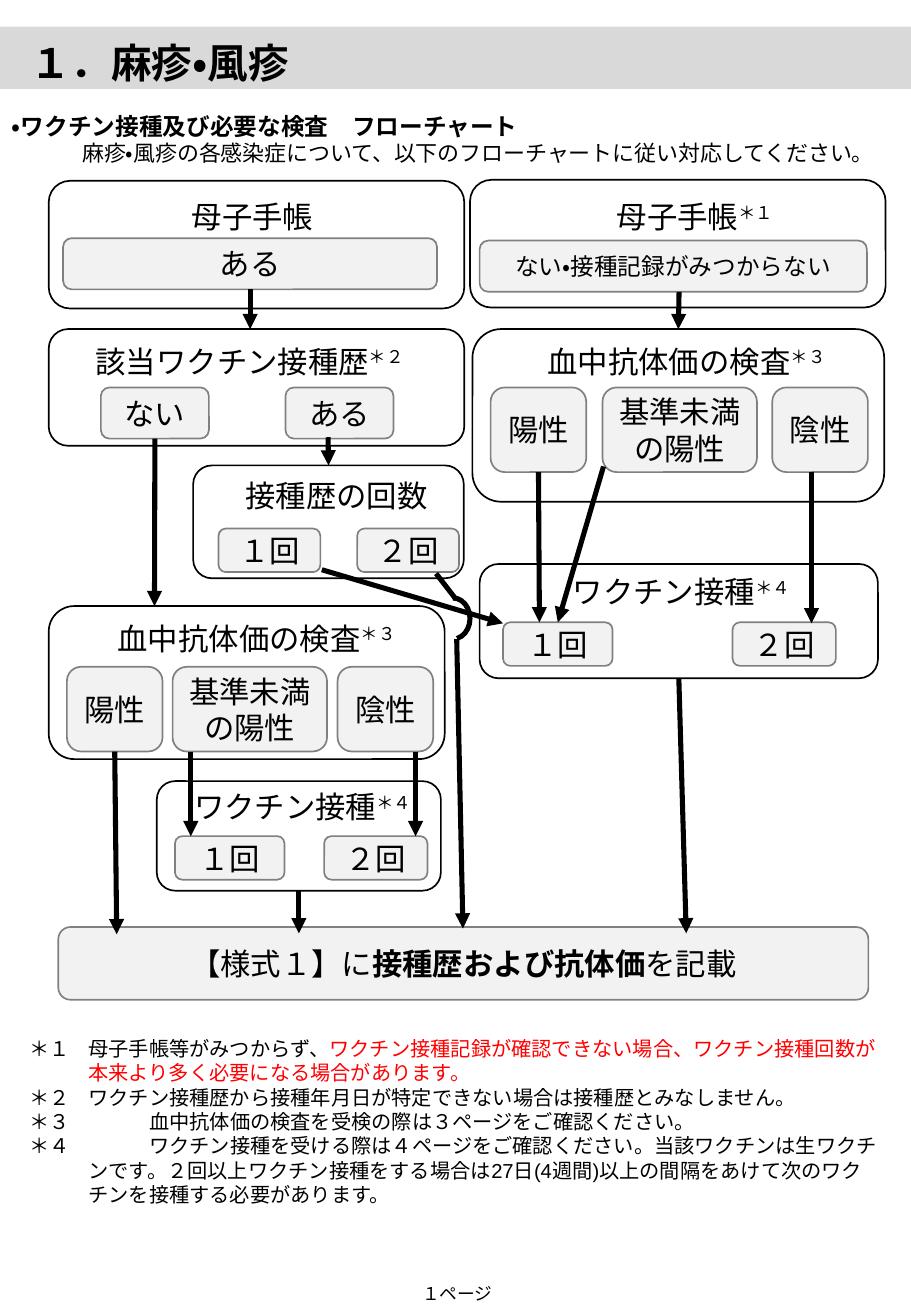
from lxml import etree
from pptx import Presentation
from pptx.dml.color import RGBColor
from pptx.enum.lang import MSO_LANGUAGE_ID
from pptx.enum.shapes import MSO_CONNECTOR, MSO_SHAPE
from pptx.enum.text import MSO_ANCHOR, PP_ALIGN
from pptx.oxml.ns import qn
from pptx.util import Cm, Pt

RECT, ROUND, ARC = MSO_SHAPE.RECTANGLE, MSO_SHAPE.ROUNDED_RECTANGLE, MSO_SHAPE.ARC
STRAIGHT = MSO_CONNECTOR.STRAIGHT
LEFT, CENTER = PP_ALIGN.LEFT, PP_ALIGN.CENTER
TOP, MIDDLE = MSO_ANCHOR.TOP, MSO_ANCHOR.MIDDLE
JAPANESE = MSO_LANGUAGE_ID.JAPANESE
TOP_SITE, BOTTOM_SITE = 0, 2

BLACK, WHITE, RED = "000000", "FFFFFF", "FF0000"
BAR_GREY, OPTION_GREY, EDGE_GREY = "D9D9D9", "F2F2F2", "808080"


def rgb(hex_color):
    return RGBColor.from_string(hex_color)


def lengths(values):
    return [Cm(value) for value in values]


class FlowPage:
    font = "Arial"
    arrow_width = Pt(3)

    def __init__(self, slide):
        self.slide = slide
        self.shapes = slide.shapes

    def style(self, run, size, color=BLACK, bold=False, raised=False):
        font = run.font
        font.name, font.size, font.bold = self.font, Pt(size), bold
        font.color.rgb = rgb(color)
        font.language_id = JAPANESE
        if raised:
            font._element.set("baseline", "30000")

    def add_runs(self, paragraph, parts, size, align=LEFT):
        """Fill a paragraph with (text, run style) parts."""
        paragraph.alignment = align
        for text, run_style in parts:
            run = paragraph.add_run()
            run.text = text
            self.style(run, size, **run_style)

    def indent(self, paragraph, left, first=0):
        """Set the left margin, the first-line offset and a tab stop at the margin."""
        properties = paragraph._p.get_or_add_pPr()
        properties.set("marL", str(Cm(left)))
        properties.set("indent", str(Cm(first)))
        tabs = etree.SubElement(properties, qn("a:tabLst"))
        etree.SubElement(tabs, qn("a:tab"), pos=str(Cm(left)), algn="l")

    def title(self, box, text, size):
        title = self.shapes.title
        title.left, title.top, title.width, title.height = lengths(box)
        frame = title.text_frame
        frame.text = text
        frame.vertical_anchor = TOP
        frame.paragraphs[0].alignment = LEFT
        self.style(frame.paragraphs[0].runs[0], size, bold=True)

    def text(self, box, parts, size, align=LEFT):
        frame = self.shapes.add_textbox(*lengths(box)).text_frame
        frame.word_wrap = True
        self.add_runs(frame.paragraphs[0], parts, size, align)
        return frame

    def shape(self, kind, box, fill=None, line=None, width=1):
        shape = self.shapes.add_shape(kind, *lengths(box))
        shape.shadow.inherit = False
        if fill:
            shape.fill.solid()
            shape.fill.fore_color.rgb = rgb(fill)
        else:
            shape.fill.background()
        if line:
            shape.line.color.rgb = rgb(line)
            shape.line.width = Pt(width)
        else:
            shape.line.fill.background()
        return shape

    def option(self, box, parts, size=18):
        option = self.shape(ROUND, box, OPTION_GREY, EDGE_GREY)
        frame = option.text_frame
        frame.word_wrap = True
        frame.vertical_anchor = MIDDLE
        self.add_runs(frame.paragraphs[0], parts, size, CENTER)
        return option

    def stage(self, box, heading, note, heading_box, top, height, options, size=18):
        """Draw a card with a heading and a row of (left, width, text) options."""
        card = self.shape(ROUND, box, WHITE, BLACK)
        parts = [(heading, {})]
        if note:
            parts.append((note, {"raised": True}))
        self.text((*heading_box, 1.02), parts, 18)
        return card, [self.option((left, top, width, height), [(text, {})], size)
                      for left, width, text in options]

    def arrow(self, start, end, head=True):
        """Join two ends; each is a point, or a shape left at its bottom or entered at its top."""
        first = start if isinstance(start, tuple) else (0, 0)
        last = end if isinstance(end, tuple) else (0, 0)
        arrow = self.shapes.add_connector(STRAIGHT, *lengths(first + last))
        if start is not first:
            arrow.begin_connect(start, BOTTOM_SITE)
        if end is not last:
            arrow.end_connect(end, TOP_SITE)
        arrow.line.color.rgb = rgb(BLACK)
        arrow.line.width = self.arrow_width
        if head:
            etree.SubElement(arrow.line._get_or_add_ln(), qn("a:tailEnd"), type="triangle")
        etree.SubElement(arrow._element.spPr, qn("a:effectLst"))


def main():
    deck = Presentation()
    deck.slide_width, deck.slide_height = Cm(19.05), Cm(27.51)
    page = FlowPage(deck.slides.add_slide(deck.slide_layouts[5]))

    title_bar = page.shape(RECT, (-0.3, 0.56, 20.12, 1.3), BAR_GREY)
    page.shapes._spTree.insert(2, title_bar._element)
    page.title((0.38, 0.66, 14.63, 1.27), "１．麻疹・風疹", 24)

    intro = page.text((0, 2.21, 18.72, 1.42),
                      [("・ワクチン接種及び必要な検査　フローチャート", {"bold": True})], 14)
    guidance = intro.add_paragraph()
    page.add_runs(guidance, [("麻疹・風疹の各感染症について、以下のフローチャートに従い対応してください。", {})], 13)
    page.indent(guidance, 1.47)

    # Flow stages
    _, (book_found,) = page.stage(
        (1.02, 3.78, 8.69, 2.67), "母子手帳", "", (3.76, 4.01, 3.18),
        4.98, 1.07, [(1.32, 7.82, "ある")])
    page.stage(
        (9.83, 3.76, 8.69, 2.67), "母子手帳", "＊１", (12.65, 4.01, 3.91),
        5.03, 1.07, [(10.03, 8.1, "ない・接種記録がみつからない")], 14)
    _, (no_history, _) = page.stage(
        (1.02, 6.88, 8.69, 2.44), "該当ワクチン接種歴", "＊２", (1.75, 7.04, 7.29),
        8.1, 1.07, [(2.11, 2.26, "ない"), (5.97, 2.26, "ある")])
    right_test, (right_positive, *_) = page.stage(
        (9.88, 6.88, 8.61, 3.61), "血中抗体価の検査", "＊３", (11.2, 7.04, 6.81),
        8.1, 1.77, [(10.26, 2, "陽性"), (12.6, 3.23, "基準未満の陽性"), (16.15, 2, "陰性")])
    dose_count, _ = page.stage(
        (4.04, 9.73, 5.66, 2.36), "接種歴の回数", "", (4.88, 9.86, 4.5),
        11.05, 0.91, [(4.57, 2.13, "１回"), (7.47, 2.13, "２回")])
    right_vaccination, (right_one_dose, _) = page.stage(
        (10.03, 11.79, 8.33, 2.39), "ワクチン接種", "＊４", (11.73, 11.86, 5.38),
        13.01, 0.91, [(10.52, 2.29, "１回"), (15.32, 2.16, "２回")])
    _, (left_positive, *_) = page.stage(
        (1.02, 12.67, 8.28, 3.2), "血中抗体価の検査", "＊３", (2.21, 12.83, 6.96),
        13.94, 1.77, [(1.4, 2, "陽性"), (3.61, 3.23, "基準未満の陽性"), (7.06, 2, "陰性")])
    left_vaccination, _ = page.stage(
        (3.28, 16.33, 5.94, 2.29), "ワクチン接種", "＊４", (3.81, 16.36, 5.38),
        17.48, 0.91, [(3.66, 2.29, "１回"), (6.78, 2.16, "２回")])
    page.option((1.22, 19.38, 16.94, 1.52),
                [("【様式１】に", {}), ("接種歴および抗体価", {"bold": True}), ("を記載", {})])

    for start, end in [
        (book_found, (5.23, 6.88)),
        ((14.2, 6.1), right_test),
        ((6.86, 9.14), dose_count),
        (no_history, (3.23, 12.67)),
        (right_positive, (11.28, 13.01)),
        ((12.62, 9.75), right_one_dose),
        ((16.97, 9.86), (16.97, 13.03)),
        ((6.73, 11.91), (10.52, 13.03)),
        (right_vaccination, (14.35, 19.51)),
        (left_positive, (2.44, 19.53)),
        ((3.99, 15.72), (3.99, 17.48)),
        ((8.69, 15.72), (8.69, 17.48)),
        (left_vaccination, (6.25, 19.51)),
        ((9.55, 13.36), (9.68, 19.41)),
    ]:
        page.arrow(start, end)

    # The two-dose route hops over the one-dose arrow
    page.arrow((9.53, 12.52), (9.12, 11.99), head=False)
    hop = page.shape(ARC, (9.12, 12.5, 0.71, 0.86), line=BLACK, width=3)
    hop.adjustments[0], hop.adjustments[1] = 162, 47.06

    footnotes = [
        [("＊１\t母子手帳等がみつからず、", {}),
         ("ワクチン接種記録が確認できない場合、ワクチン接種回数が本来より多く必要になる場合があります。",
          {"color": RED})],
        [("＊２\tワクチン接種歴から接種年月日が特定できない場合は接種歴とみなしません。", {})],
        [("＊３\t\t血中抗体価の検査を受検の際は３ページをご確認ください。", {})],
        [("＊４\t\tワクチン接種を受ける際は４ページをご確認ください。当該ワクチンは生ワクチンです。"
          "２回以上ワクチン接種をする場合は27日(4週間)以上の間隔をあけて次のワクチンを接種する必要があります。", {})],
    ]
    notes = page.text((0.36, 21.54, 18.31, 3.84), footnotes[0], 12)
    for footnote in footnotes[1:]:
        page.add_runs(notes.add_paragraph(), footnote, 12)
    for paragraph in notes.paragraphs:
        page.indent(paragraph, 1.24, -1.24)

    page.text((6.76, 26.7, 5.61, 0.71), [("１ページ", {})], 10.5, CENTER)
    deck.save("out.pptx")


if __name__ == "__main__":
    main()
